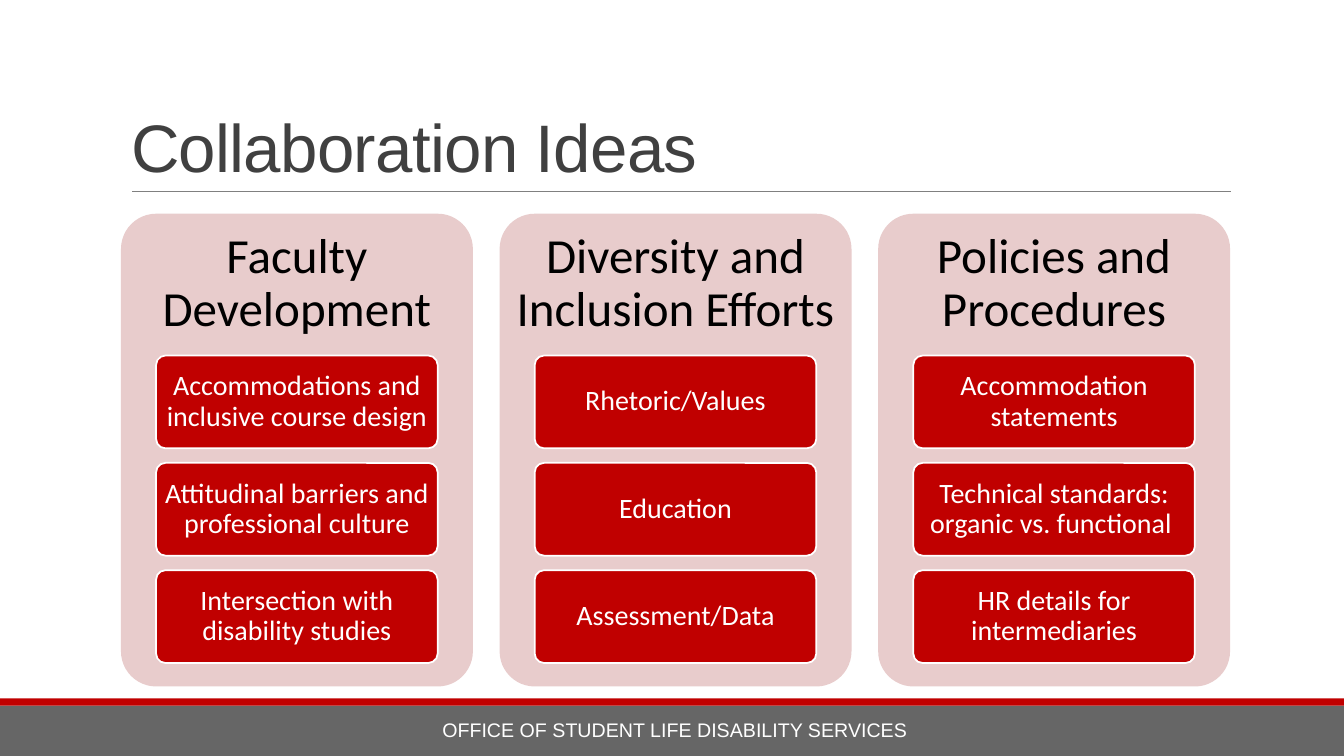
from dataclasses import dataclass

from lxml import etree
from pptx import Presentation
from pptx import util as u
from pptx.dml.color import RGBColor
from pptx.enum import shapes, text
from pptx.oxml.ns import qn

RED = RGBColor(0xC0, 0x00, 0x00)
PINK = RGBColor(0xE8, 0xCC, 0xCC)
BAND_GREY = RGBColor(0x66, 0x66, 0x66)
RULE_GREY = RGBColor(0x80, 0x80, 0x80)
TITLE_GREY = RGBColor(0x40, 0x40, 0x40)
BLACK = RGBColor(0x00, 0x00, 0x00)
WHITE = RGBColor(0xFF, 0xFF, 0xFF)

SLIDE_W, SLIDE_H = 13.33, 7.5
GRID_LEFT, GRID_TOP, GRID_W = 1.2, 2.12, 11
PANEL_W, PANEL_H = 3.49, 4.69
HEADING_H = 0.3 * PANEL_H
CARD_W, CARD_H = 0.8 * PANEL_W, 0.92
ROW_STEP = 1.065


@dataclass(frozen=True)
class Box:
    left: float
    top: float
    width: float
    height: float

    def emu(self) -> list[int]:
        return [u.Inches(n) for n in (self.left, self.top, self.width, self.height)]


@dataclass(frozen=True)
class Theme:
    heading: str
    cards: tuple[str, ...]


THEMES = (
    Theme("Faculty Development", (
        "Accommodations and inclusive course design",
        "Attitudinal barriers and professional culture",
        "Intersection with disability studies")),
    Theme("Diversity and Inclusion Efforts", (
        "Rhetoric/Values", "Education", "Assessment/Data")),
    Theme("Policies and Procedures", (
        "Accommodation statements",
        "Technical standards: organic vs. functional ",
        "HR details for intermediaries")),
)
COLUMN_STEP = (GRID_W - PANEL_W) / (len(THEMES) - 1)


def write(shape, words: str, *, size: float, color: RGBColor, font: str = "Calibri",
          align=text.PP_ALIGN.CENTER, anchor=text.MSO_ANCHOR.MIDDLE,
          line: float = 0.9, inset: tuple[float, float] = (0.1, 0.05),
          tracking: float = 0) -> None:
    """Fill a shape with one paragraph; inset is (sides, top and bottom) in inches."""
    frame = shape.text_frame
    frame.word_wrap = True
    frame.auto_size = text.MSO_AUTO_SIZE.NONE
    frame.vertical_anchor = anchor
    frame.margin_left = frame.margin_right = u.Inches(inset[0])
    frame.margin_top = frame.margin_bottom = u.Inches(inset[1])
    para = frame.paragraphs[0]
    para.alignment, para.line_spacing = align, line
    span = para.add_run()
    span.text = words
    span.font.name, span.font.size = font, u.Pt(size)
    span.font.color.rgb = color
    if tracking:
        span._r.get_or_add_rPr().set("spc", str(round(tracking * 100)))


def add_block(page, box: Box, fill: RGBColor, *, rounded: bool = False,
              outline: RGBColor | None = None):
    kind = shapes.MSO_SHAPE.ROUNDED_RECTANGLE if rounded else shapes.MSO_SHAPE.RECTANGLE
    block = page.shapes.add_shape(kind, *box.emu())
    block.shadow.inherit = False
    block.fill.solid()
    block.fill.fore_color.rgb = fill
    if rounded:
        block.adjustments[0] = 0.1
    if outline is None:
        block.line.fill.background()
    else:
        block.line.color.rgb = outline
        block.line.width = u.Pt(1.25)
    return block


def add_rule(page, left: float, right: float, y: float) -> None:
    rule = page.shapes.add_connector(shapes.MSO_CONNECTOR.STRAIGHT, u.Inches(left),
                                     u.Inches(y), u.Inches(right), u.Inches(y))
    rule.line.color.rgb = RULE_GREY
    rule.line.width = u.Pt(0.5)
    etree.SubElement(rule._element.spPr, qn("a:effectLst"))


def add_theme(page, theme: Theme, column: int) -> None:
    left = GRID_LEFT + column * COLUMN_STEP
    add_block(page, Box(left, GRID_TOP, PANEL_W, PANEL_H), PINK, rounded=True)
    heading = page.shapes.add_textbox(*Box(left, GRID_TOP, PANEL_W, HEADING_H).emu())
    write(heading, theme.heading, size=35, color=BLACK, inset=(0.15, 0.15))
    for row, words in enumerate(theme.cards):
        box = Box(left + (PANEL_W - CARD_W) / 2,
                  GRID_TOP + HEADING_H + row * ROW_STEP, CARD_W, CARD_H)
        card = add_block(page, box, RED, rounded=True, outline=WHITE)
        write(card, words, size=20, color=WHITE, inset=(0.06, 0.04))


def main() -> None:
    deck = Presentation()
    deck.slide_width, deck.slide_height = u.Inches(SLIDE_W), u.Inches(SLIDE_H)
    page = deck.slides.add_slide(deck.slide_layouts.get_by_name("Title Only"))

    add_block(page, Box(0, 7, SLIDE_W, 0.5), BAND_GREY)
    add_block(page, Box(0, 6.93, SLIDE_W, 0.07), RED)
    add_rule(page, 1.31, 12.21, 1.9)

    title = page.shapes.title
    title.left, title.top, title.width, title.height = Box(GRID_LEFT, 0.31, GRID_W, 1.59).emu()
    write(title, "Collaboration Ideas", size=48, color=TITLE_GREY, font="Arial",
          align=text.PP_ALIGN.LEFT, anchor=text.MSO_ANCHOR.BOTTOM, line=0.85,
          tracking=-0.5)

    footer = page.shapes.add_textbox(*Box(4.06, 7.04, 5.27, 0.4).emu())
    write(footer, "OFFICE OF STUDENT LIFE DISABILITY SERVICES", size=14,
          color=WHITE, font="Arial", line=1.0)

    for column, theme in enumerate(THEMES):
        add_theme(page, theme, column)
    deck.save("out.pptx")


if __name__ == "__main__":
    main()
